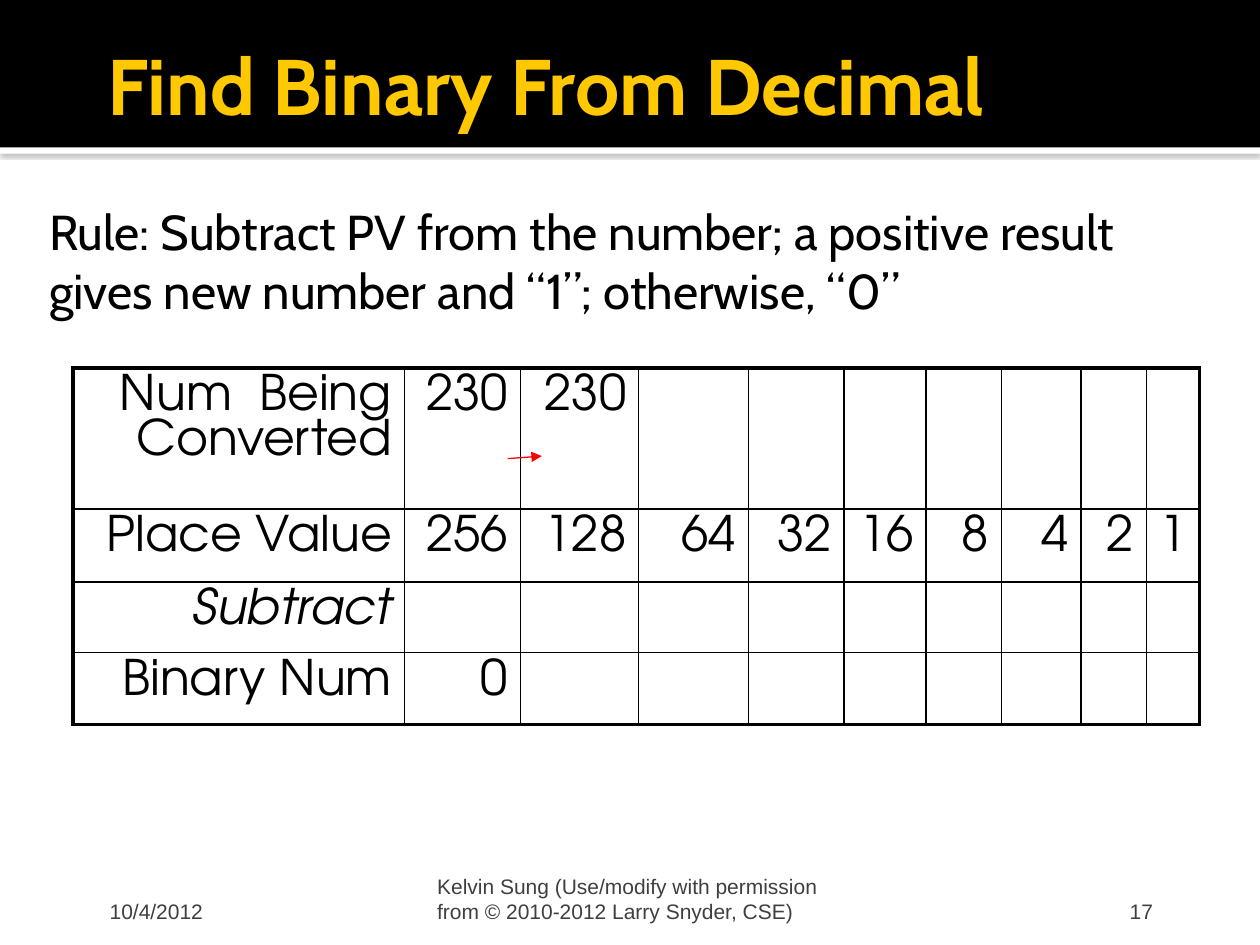
"""Build the slide on finding a binary number from a decimal one."""
from dataclasses import dataclass

from lxml import etree
from pptx import Presentation
from pptx import util as u
from pptx.dml import color
from pptx.enum import shapes, text
from pptx.oxml import ns, parse_xml

LEFT, RIGHT = text.PP_ALIGN.LEFT, text.PP_ALIGN.RIGHT
TOP, MID, BASE = text.MSO_ANCHOR.TOP, text.MSO_ANCHOR.MIDDLE, text.MSO_ANCHOR.BOTTOM


@dataclass(frozen=True)
class Theme:
    """Colours, fonts, type sizes and line widths."""
    black: str = "000000"
    white: str = "FFFFFF"
    gold: str = "FFC800"
    grey: str = "3F3F3F"
    red: str = "FF0000"
    head: str = "Cabin"
    grid: str = "TeX Gyre Adventor"
    small: str = "Arial"
    title: float = 45
    body: float = 28
    note: float = 12
    thin: float = 1
    thick: float = 2.25
    arrow: float = 0.75


@dataclass(frozen=True)
class Style:
    """Look of one paragraph."""
    name: str
    size: float
    tint: str
    bold: bool = False
    align: text.PP_ALIGN = LEFT


@dataclass(frozen=True)
class Label:
    """Text with its place, insets and anchor."""
    words: str
    box: tuple
    inset: tuple
    style: Style
    anchor: text.MSO_ANCHOR = BASE


T = Theme()
NOTE = Style(T.small, T.note, T.grey)
GRID = Style(T.grid, T.body, T.black, align=RIGHT)
TITLE = Label("Find Binary From Decimal", (0.75, 0.17, 8.5, 1),
              (0.1, 0.05, 0.05, 0.05), Style(T.head, T.title, T.gold, True), MID)
LABELS = (
    Label("Rule: Subtract PV from the number; a positive result gives new "
          "number and “1”; otherwise, “0”", (0.33, 1.5, 9.34, 4.5),
          (0.06, 0.1, 0.1, 0.05), Style(T.head, T.body, T.black), TOP),
    Label("10/4/2012", (0.75, 6.83, 2.08, 0.5), (0.12, 0.05, 0.05, 0), NOTE),
    Label("Kelvin Sung (Use/modify with permission from © 2010-2012 Larry Snyder, CSE)",
          (3.42, 6.83, 3.17, 0.5), (0.05, 0.05, 0.05, 0), NOTE),
    Label("17", (7.17, 6.83, 2.08, 0.5), (0.1, 0.05, 0.1, 0),
          Style(T.small, T.note, T.grey, align=RIGHT)),
)
COLS = (2.63, 0.92, 0.94, 0.87, 0.76, 0.65, 0.6, 0.63, 0.52, 0.42)
TALL = (1.12, 0.58, 0.56, 0.57)
ROWS = (
    ("Num  Being Converted", "230", "230"),
    ("Place Value", *(str(2 ** n) for n in range(8, -1, -1))),
    ("Subtract",),
    ("Binary Num", "0"),
)
SHADOW = (f'<a:effectLst {ns.nsdecls("a")}><a:outerShdw blurRad="31750" dist="10160" '
          'dir="5400000" algn="tl" rotWithShape="0"><a:srgbClr val="808080">'
          '<a:alpha val="60000"/></a:srgbClr></a:outerShdw></a:effectLst>')


def apply(item, values: dict) -> None:
    """Set each named attribute of an item."""
    for key, value in values.items():
        setattr(item, key, value)


def inches(nums: tuple) -> list:
    """Turn numbers into lengths."""
    return [u.Inches(n) for n in nums]


def write(frame, words: str, style: Style, slant: bool = False) -> None:
    """Put one styled paragraph in a text frame."""
    para = frame.paragraphs[0]
    para.alignment = style.align
    run = para.add_run()
    run.text = words
    apply(run.font, {"name": style.name, "size": u.Pt(style.size),
                     "bold": style.bold, "italic": slant})
    run.font.color.rgb = color.RGBColor.from_string(style.tint)


def place(shape, label: Label) -> None:
    """Move a text shape and fill it with its label."""
    apply(shape, dict(zip(("left", "top", "width", "height"), inches(label.box))))
    sides = ("margin_left", "margin_top", "margin_right", "margin_bottom")
    apply(shape.text_frame, {"word_wrap": True, "auto_size": text.MSO_AUTO_SIZE.NONE,
                             "vertical_anchor": label.anchor,
                             **dict(zip(sides, inches(label.inset)))})
    write(shape.text_frame, label.words, label.style)


def band(slide, box: tuple, tint: str):
    """Add a plain bar without line or shadow."""
    bar = slide.shapes.add_shape(shapes.MSO_SHAPE.RECTANGLE, *inches(box))
    bar.shadow.inherit = False
    bar.fill.solid()
    bar.fill.fore_color.rgb = color.RGBColor.from_string(tint)
    bar.line.fill.background()
    return bar


def header(slide) -> None:
    """Set the title on its black bar and shaded white strip."""
    strip = band(slide, (0, 1.17, 10, 0.05), T.white)
    props = strip.element.spPr
    props.replace(props.find(ns.qn("a:effectLst")), parse_xml(SHADOW))
    bar = band(slide, (0, 0, 10, 1.17), T.black)
    title = slide.shapes.title
    for shape in (strip, bar):
        title.element.addprevious(shape.element)
    place(title, TITLE)


def edges(cell, widths: dict) -> None:
    """Draw the four borders of a cell."""
    props = cell._tc.get_or_add_tcPr()
    for spot, (side, width) in enumerate(widths.items()):
        props.insert(spot, parse_xml(
            f'<a:ln{side} {ns.nsdecls("a")} w="{u.Pt(width)}"><a:solidFill>'
            f'<a:srgbClr val="{T.black}"/></a:solidFill></a:ln{side}>'))


def table(slide) -> None:
    """Add the place value table with a thick outer frame."""
    size = len(ROWS), len(COLS)
    box = inches((0.58, 2.92, sum(COLS), sum(TALL)))
    grid = slide.shapes.add_table(*size, *box).table
    apply(grid, {"first_row": False, "horz_banding": False})
    for col, width in zip(grid.columns, inches(COLS)):
        col.width = width
    for row, tall in zip(grid.rows, inches(TALL)):
        row.height = tall
    for r, words in enumerate(ROWS):
        for c in range(size[1]):
            cell = grid.cell(r, c)
            cell.fill.background()
            outer = {"L": c == 0, "R": c == size[1] - 1,
                     "T": r == 0, "B": r == size[0] - 1}
            edges(cell, {k: T.thick if v else T.thin for k, v in outer.items()})
            if c < len(words):
                write(cell.text_frame, words[c], GRID, words[c] == "Subtract")


def arrow(slide, ends: tuple) -> None:
    """Add a thin red arrow."""
    line = slide.shapes.add_connector(shapes.MSO_CONNECTOR.STRAIGHT, *inches(ends))
    line.line.width = u.Pt(T.arrow)
    line.line.color.rgb = color.RGBColor.from_string(T.red)
    etree.SubElement(line.line._get_or_add_ln(), ns.qn("a:tailEnd"), type="triangle")
    etree.SubElement(line.element.spPr, ns.qn("a:effectLst"))


def main() -> None:
    """Build and save the slide."""
    deck = Presentation()
    apply(deck, {"slide_width": u.Inches(10), "slide_height": u.Inches(7.5)})
    slide = deck.slides.add_slide(deck.slide_layouts[5])
    header(slide)
    for label in LABELS:
        place(slide.shapes.add_textbox(0, 0, 0, 0), label)
    table(slide)
    arrow(slide, (4.03, 3.64, 4.3, 3.62))
    deck.save("out.pptx")


if __name__ == "__main__":
    main()
